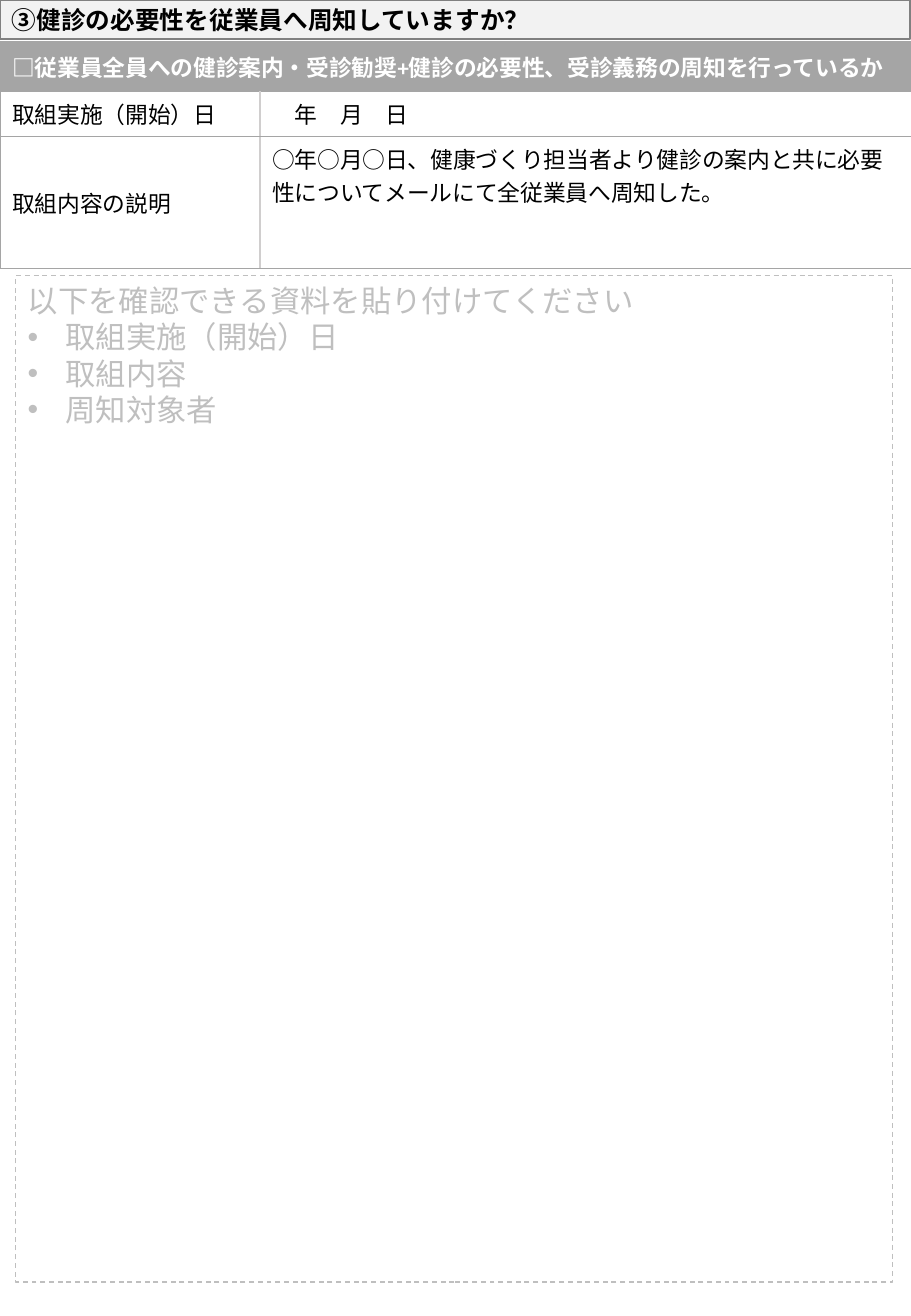
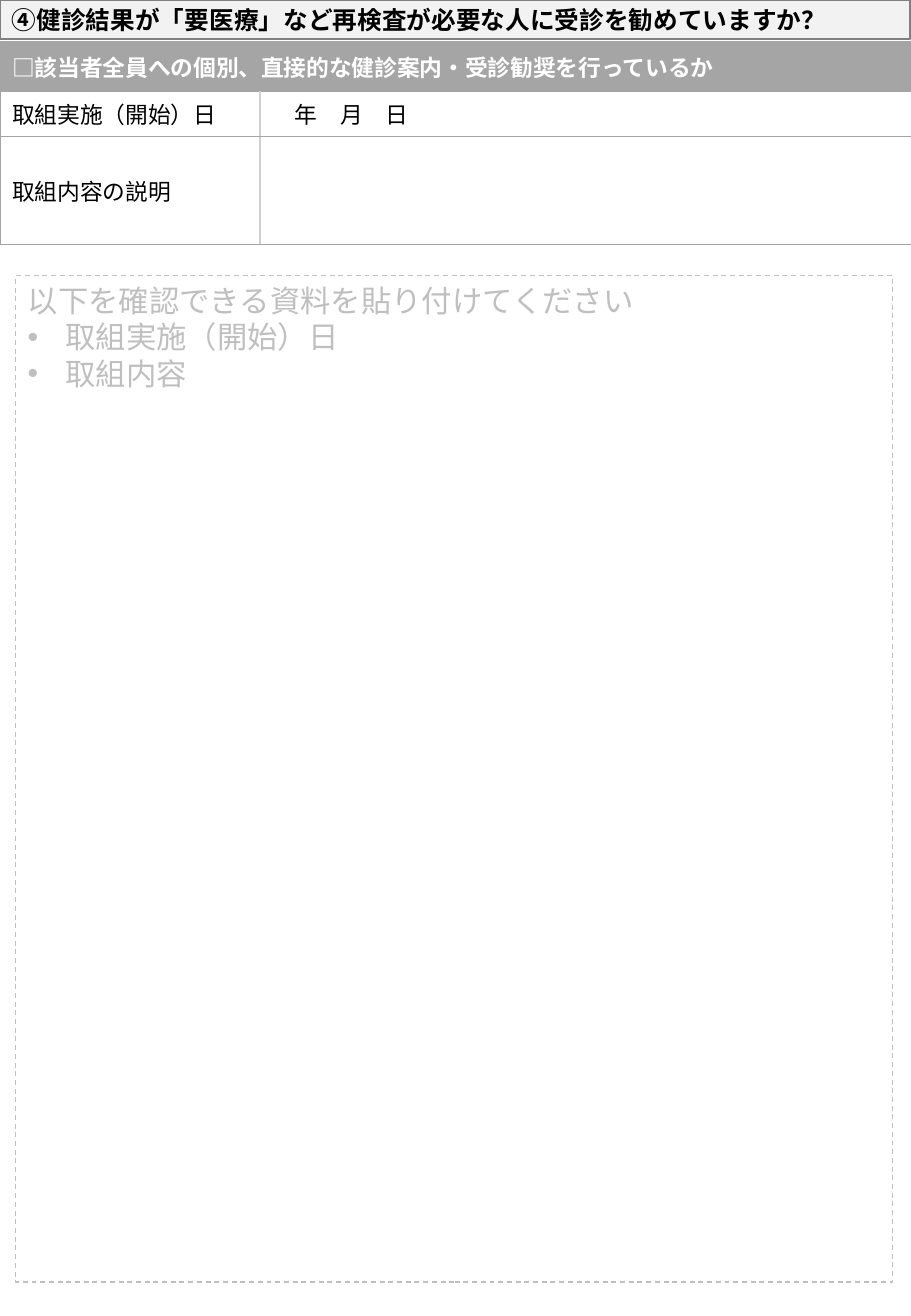
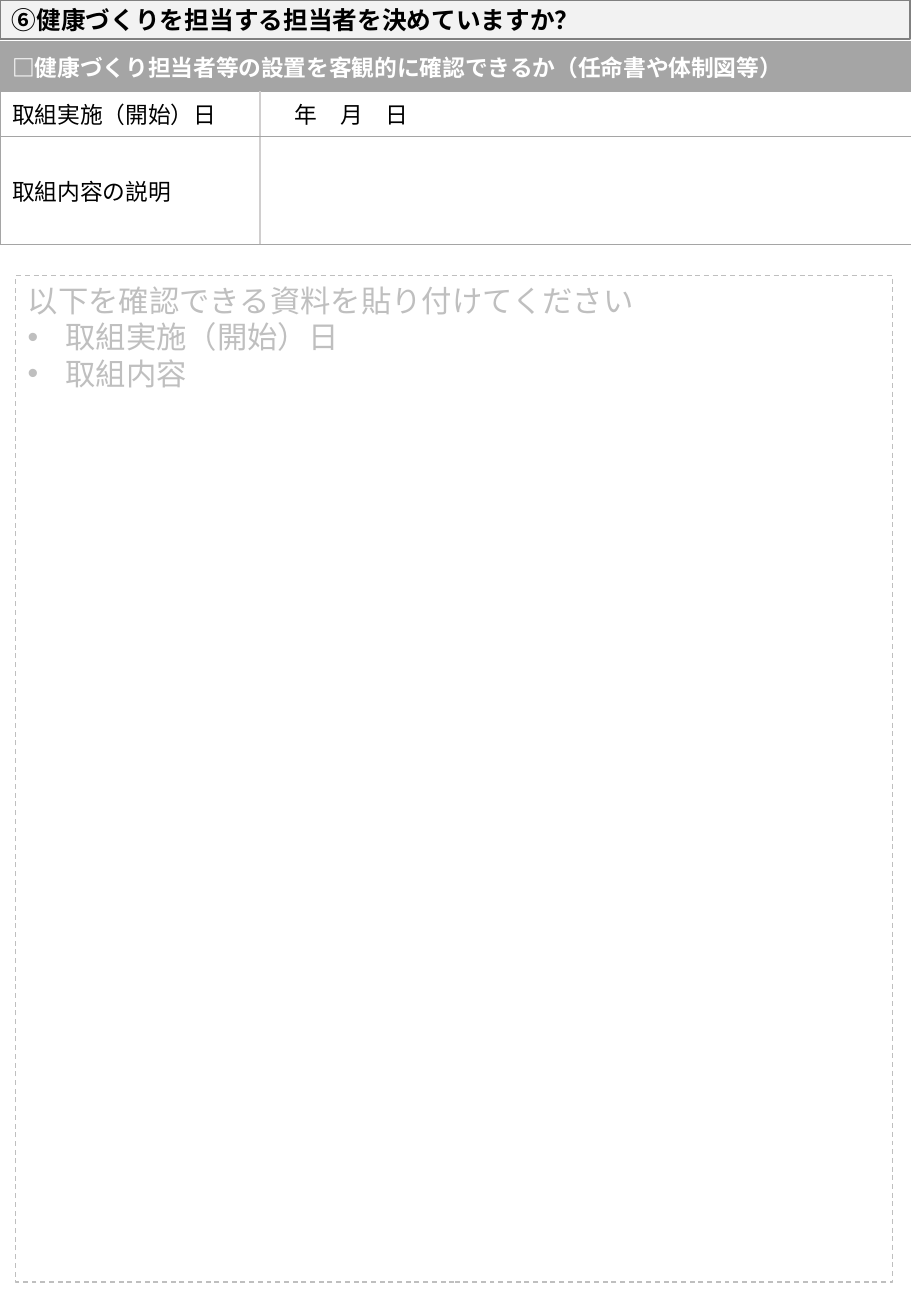
from dataclasses import dataclass

from lxml import etree
from pptx import Presentation
from pptx.dml.color import RGBColor
from pptx.enum.dml import MSO_LINE
from pptx.enum.shapes import MSO_SHAPE
from pptx.enum.text import MSO_ANCHOR, PP_ALIGN
from pptx.oxml.ns import qn
from pptx.util import Inches, Pt

RECT = MSO_SHAPE.RECTANGLE
DASH = MSO_LINE.DASH
TOP, MIDDLE = MSO_ANCHOR.TOP, MSO_ANCHOR.MIDDLE
LEFT = PP_ALIGN.LEFT


@dataclass(frozen=True)
class Theme:
    band: str = "F2F2F2"
    edge: str = "808080"
    head: str = "A5A5A5"
    split: str = "D0CECE"
    hint: str = "BFBFBF"
    ink: str = "000000"
    white: str = "FFFFFF"
    title_face: str = "Arial"
    body_face: str = "Calibri"
    title_size: float = 14.6
    cell_size: float = 13.5
    hint_size: float = 18
    hint_pitch: float = 21.6

    def font(self, face, size, color, bold=False):
        return {"name": face, "size": Pt(size), "bold": bold, "color": color}


class Sheet:
    def __init__(self, deck, theme):
        self.theme = theme
        self.slide = deck.slides.add_slide(deck.slide_layouts[6])

    def label(self, para, text, style):
        para.alignment = LEFT
        run = para.add_run()
        run.text = text
        for key, value in style.items():
            if key == "color":
                run.font.color.rgb = RGBColor.from_string(value)
            else:
                setattr(run.font, key, value)

    def box(self, place, line, width, anchor):
        shape = self.slide.shapes.add_shape(RECT, *map(Inches, place))
        shape.shadow.inherit = False
        shape.fill.background()
        shape.line.color.rgb = RGBColor.from_string(line)
        shape.line.width = Pt(width)
        shape.text_frame.word_wrap = True
        shape.text_frame.vertical_anchor = anchor
        return shape

    def title(self, text):
        t = self.theme
        shape = self.box((0, 0, 7.49, 0.32), t.edge, 1, MIDDLE)
        shape.fill.solid()
        shape.fill.fore_color.rgb = RGBColor.from_string(t.band)
        style = t.font(t.title_face, t.title_size, t.ink, True)
        self.label(shape.text_frame.paragraphs[0], text, style)

    def border(self, cell, inner):
        t = self.theme
        props = cell._tc.get_or_add_tcPr()
        for spot, side in enumerate(("L", "R", "T", "B")):
            color, width = (t.split, 1) if side == inner else (t.head, 0.5)
            line = etree.Element(qn(f"a:ln{side}"), w=str(Pt(width)))
            fill = etree.SubElement(line, qn("a:solidFill"))
            etree.SubElement(fill, qn("a:srgbClr"), val=color)
            props.insert(spot, line)

    def cell(self, cell, text, style, anchor, fill=None, inner=None):
        cell.vertical_anchor = anchor
        if fill:
            cell.fill.solid()
            cell.fill.fore_color.rgb = RGBColor.from_string(fill)
        else:
            cell.fill.background()
        self.border(cell, inner)
        if text:
            self.label(cell.text_frame.paragraphs[0], text, style)

    def table(self, check, note, depth):
        t = self.theme
        cols, rows = (2.14, 5.36), (0.41, 0.37, depth)
        frame = self.slide.shapes.add_table(
            len(rows), len(cols), Inches(0), Inches(0.34),
            Inches(sum(cols)), Inches(sum(rows)))
        table = frame.table
        table.first_row = table.horz_banding = False
        for col, width in zip(table.columns, cols):
            col.width = Inches(width)
        for row, height in zip(table.rows, rows):
            row.height = Inches(height)
        table.cell(0, 0).merge(table.cell(0, 1))
        bold = t.font(t.body_face, t.cell_size, t.white, True)
        plain = t.font(t.body_face, t.cell_size, t.ink)
        for col, text in enumerate((check, "")):
            self.cell(table.cell(0, col), text, bold, MIDDLE, t.head)
        pairs = (("取組実施（開始）日", "　年　月　日"), ("取組内容の説明", note))
        for row, (name, value) in enumerate(pairs, 1):
            self.cell(table.cell(row, 0), name, plain, MIDDLE, inner="R")
            self.cell(table.cell(row, 1), value, plain, TOP, inner="L")

    def bullet(self, para):
        props = para._p.get_or_add_pPr()
        props.set("marL", str(Inches(0.31)))
        props.set("indent", str(-Inches(0.31)))
        etree.SubElement(props, qn("a:buFont"), typeface="Arial")
        etree.SubElement(props, qn("a:buChar"), char="•")

    def paste(self, items):
        t = self.theme
        shape = self.box((0.13, 2.27, 7.22, 8.28), t.hint, 0.75, TOP)
        shape.line.dash_style = DASH
        frame = shape.text_frame
        style = t.font(t.body_face, t.hint_size, t.hint)
        lines = ("以下を確認できる資料を貼り付けてください", *items)
        for spot, text in enumerate(lines):
            para = frame.add_paragraph() if spot else frame.paragraphs[0]
            para.line_spacing = Pt(t.hint_pitch)
            self.label(para, text, style)
            if spot:
                self.bullet(para)


ITEMS = ("取組実施（開始）日", "取組内容")
PAGES = (
    {
        "title": "③健診の必要性を従業員へ周知していますか？",
        "check": "□従業員全員への健診案内・受診勧奨+健診の必要性、受診義務の周知を行っているか",
        "note": "○年○月○日、健康づくり担当者より健診の案内と共に必要性についてメールにて全従業員へ周知した。",
        "depth": 1.09,
        "items": (*ITEMS, "周知対象者"),
    },
    {
        "title": "④健診結果が「要医療」など再検査が必要な人に受診を勧めていますか？",
        "check": "□該当者全員への個別、直接的な健診案内・受診勧奨を行っているか",
        "note": "",
        "depth": 0.89,
        "items": ITEMS,
    },
    {
        "title": "⑥健康づくりを担当する担当者を決めていますか？",
        "check": "□健康づくり担当者等の設置を客観的に確認できるか（任命書や体制図等）",
        "note": "",
        "depth": 0.89,
        "items": ITEMS,
    },
)


def main():
    deck = Presentation()
    deck.slide_width, deck.slide_height = Inches(7.5), Inches(10.83)
    theme = Theme()
    for page in PAGES:
        sheet = Sheet(deck, theme)
        sheet.title(page["title"])
        sheet.table(page["check"], page["note"], page["depth"])
        sheet.paste(page["items"])
    deck.save("out.pptx")


if __name__ == "__main__":
    main()
